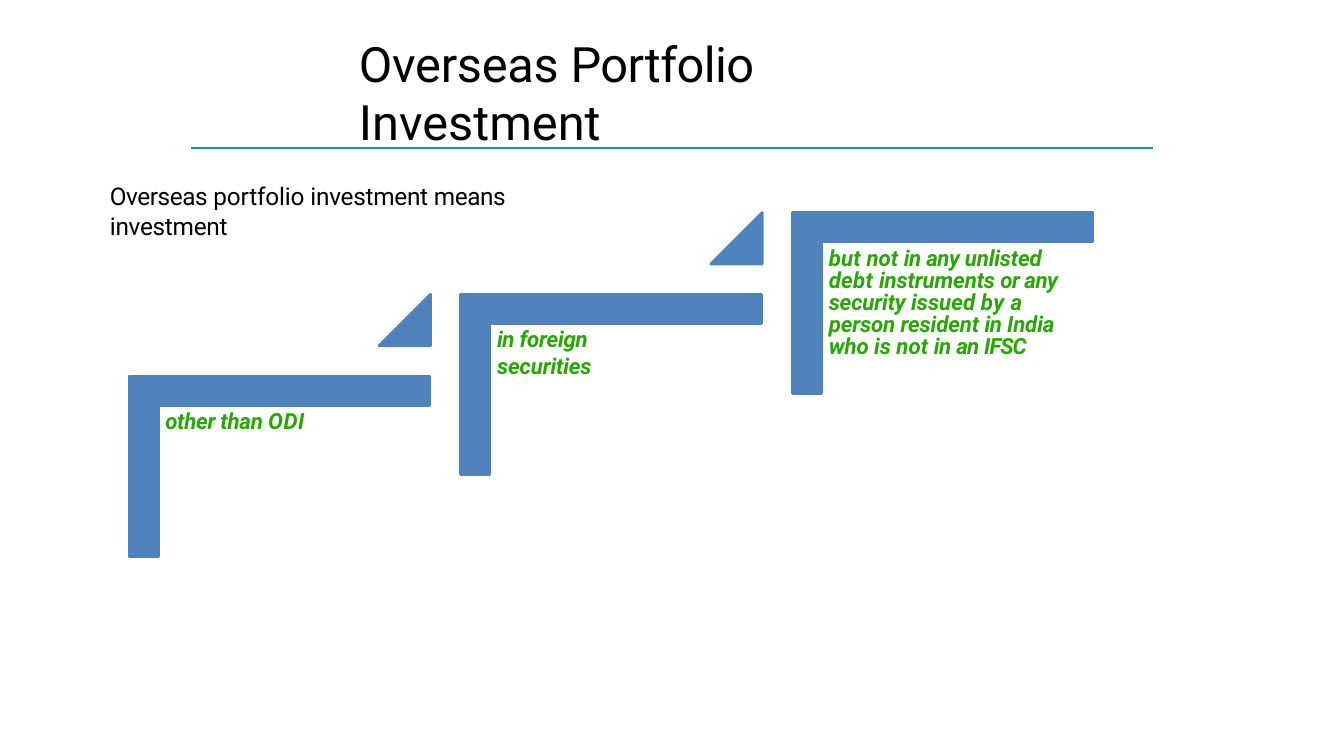
from pptx import Presentation
from pptx.dml.color import RGBColor as Rgb
from pptx.enum.shapes import MSO_CONNECTOR as Conn
from pptx.enum.text import MSO_ANCHOR as Anchor, MSO_AUTO_SIZE as Fit, PP_ALIGN as Align
from pptx.oxml.ns import qn
from pptx.util import Inches, Pt
from lxml.etree import SubElement as Sub

HUES = {"ink": "000000", "step": "4F81BC", "rule": "2092A1", "note": "29A603"}
FONT = "Roboto"
WIDE, HIGH, THICK, TIP = 2.98, 1.79, 0.29, 0.51

TITLE = [("Overseas ", -0.2), ("Portfolio ", -0.4), ("Investment", 0)]
LEAD = [("Overseas ", -0.3), ("portfolio ", -0.1), ("investment ", -0.2),
        ("means ", -0.3), ("investment", -0.2)]
STEPS = [
    (1.44, 0.29, 0.02, 1.3, 1, [("other than ", -0.2), ("ODI", 0.3)]),
    (1.82, 0.29, 0.02, 1.3, 1,
     [("in", -0.3), (" foreign ", -0.2), ("securities", -0.1)]),
    (2.52, 1.17, 0.07, 4.7, 0.82,
     [("but ", 0.1), ("not ", 0), ("in ", -0.3), ("any ", -0.4),
      ("unlisted ", -0.1), ("debt ", 0.2), ("instruments ", -0.1),
      ("or any ", -0.4), ("security ", -0.1), ("issued ", 0), ("by ", 0.3),
      ("a ", -0.6), ("person resident ", -0.1), ("in ", -0.3),
      ("India who ", -0.1), ("is not ", 0), ("in ", -0.3), ("an ", -0.5),
      ("IFSC", -0.7)]),
]


class Deck:
    """Holds the style and the current slide, and draws each kind of element."""

    def __init__(self):
        self.prs = Presentation()
        self.prs.slide_width, self.prs.slide_height = Inches(13.33), Inches(7.5)
        self.slide = self.prs.slides.add_slide(self.prs.slide_layouts[5])
        self.shapes = self.slide.shapes

    def hue(self, name):
        return Rgb.from_string(HUES[name])

    def fill_text(self, frame, runs, size, hue="ink", bold=False, top=0.01,
                  before=1, lines=1, anchor=Anchor.TOP):
        frame.word_wrap = True
        frame.auto_size = Fit.SHAPE_TO_FIT_TEXT
        frame.vertical_anchor = anchor
        frame.margin_left, frame.margin_top = Inches(0.01), Inches(top)
        frame.margin_right = frame.margin_bottom = 0
        para = frame.paragraphs[0]
        para.alignment = Align.LEFT
        para.space_before, para.line_spacing = Pt(before), float(lines)
        for text, gap in runs:
            run = para.add_run()
            run.text = text
            font = run.font
            font.name, font.size = FONT, Pt(size)
            font.bold = font.italic = bold
            font.color.rgb = self.hue(hue)
            run._r.get_or_add_rPr().set("spc", str(round(gap * 100)))

    def title(self, box, runs):
        head = self.shapes.title
        head.left, head.top, head.width, head.height = map(Inches, box)
        self.fill_text(head.text_frame, runs, 34.8, anchor=Anchor.MIDDLE)

    def text(self, box, runs, size, **style):
        label = self.shapes.add_textbox(*map(Inches, box))
        self.fill_text(label.text_frame, runs, size, **style)

    def rule(self, left, right, y):
        line = self.shapes.add_connector(
            Conn.STRAIGHT, Inches(left), Inches(y), Inches(right), Inches(y))
        line.line.color.rgb = self.hue("rule")
        line.line.width = Pt(1)
        Sub(line._element.spPr, qn("a:effectLst"))

    def form(self, x, y, points):
        spots = [(Inches(x + dx), Inches(y + dy)) for dx, dy in points]
        pen = self.shapes.build_freeform(*spots[0])
        pen.add_line_segments(spots[1:], close=True)
        shape = pen.convert_to_shape()
        shape.shadow.inherit = False
        shape.fill.solid()
        shape.fill.fore_color.rgb = self.hue("step")
        shape.line.color.rgb = self.hue("step")
        shape.line.width = Pt(2)

    def angle(self, x, y):
        self.form(x, y, [(0, 0), (WIDE, 0), (WIDE, THICK), (THICK, THICK),
                         (THICK, HIGH), (0, HIGH)])

    def wedge(self, x, y):
        self.form(x, y, [(TIP, 0), (TIP, TIP), (0, TIP)])

    def save(self):
        self.prs.save("out.pptx")


def main():
    deck = Deck()
    deck.text((1.08, 1.79, 4.62, 0.6), LEAD, 17.4)
    deck.title((3.55, 0.61, 6.22, 0.6), TITLE)
    deck.rule(1.89, 11.44, 1.47)
    for i, (wide, high, top, before, lines, runs) in enumerate(STEPS):
        x, y = 1.28 + 3.29 * i, 3.73 - 0.81 * i
        if i:
            deck.wedge(x - 0.81, y)
        deck.angle(x, y)
        deck.text((x + 0.35, y + THICK, wide, high), runs, 15.9, hue="note",
                  bold=True, top=top, before=before, lines=lines)
    deck.save()


if __name__ == "__main__":
    main()
